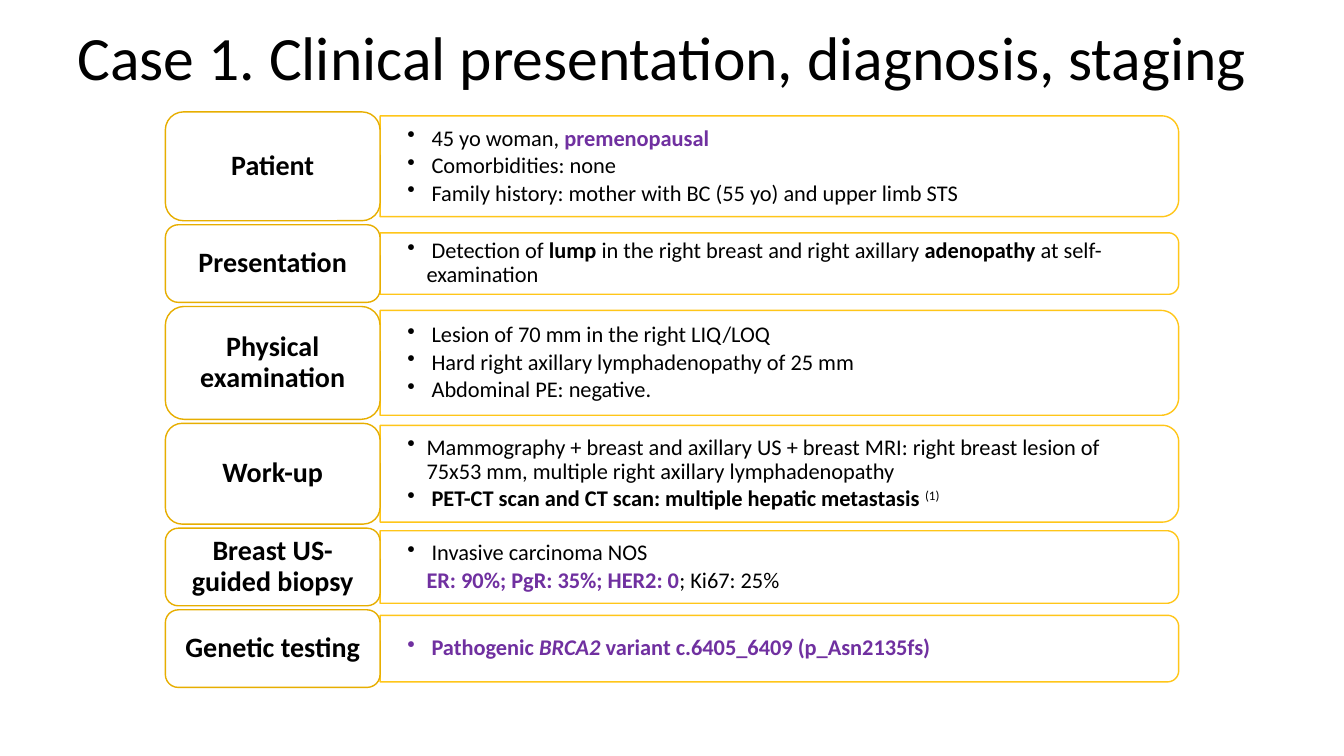
from math import cos, pi, sin

from lxml.etree import SubElement
from pptx import Presentation
from pptx.dml.color import RGBColor
from pptx.enum.shapes import MSO_SHAPE
from pptx.enum.text import MSO_ANCHOR, PP_ALIGN
from pptx.oxml.ns import qn
from pptx.util import Inches, Pt

BLACK = RGBColor(0x00, 0x00, 0x00)
WHITE = RGBColor(0xFF, 0xFF, 0xFF)
PURPLE = RGBColor(0x70, 0x30, 0xA0)
GOLD = RGBColor(0xFF, 0xC0, 0x00)
DARK_GOLD = RGBColor(0xE7, 0xAE, 0x00)

FONT = "Calibri"
LABEL_LEFT, LABEL_WIDTH = 1.64, 2.13
FACTS_LEFT, FACTS_RIGHT = 3.77, 11.69
FIRST_TOP, ROW_GAP = 1.11, 0.04
ARC_STEPS = 12

PLAIN, BOLD, KEY, KEY_ITALIC, NOTE = "plain", "bold", "key", "key italic", "note"

CASE_ROWS = [
    ("Patient", 1.08, 1.0, [
        [(" 45 yo woman, ", PLAIN), ("premenopausal", KEY)],
        [(" Comorbidities: none", PLAIN)],
        [(" Family history: mother with BC (55 yo) and upper limb STS", PLAIN)],
    ]),
    ("Presentation", 0.77, 0.61, [
        [(" Detection of ", PLAIN), ("lump", BOLD),
         (" in the right breast and right axillary ", PLAIN),
         ("adenopathy", BOLD), (" at self-examination", PLAIN)],
    ]),
    ("Physical examination", 1.12, 1.04, [
        [(" Lesion of 70 mm in the right LIQ/LOQ", PLAIN)],
        [(" Hard right axillary lymphadenopathy of 25 mm", PLAIN)],
        [(" Abdominal PE: negative.", PLAIN)],
    ]),
    ("Work-up", 1.0, 0.96, [
        [("Mammography + breast and axillary US + breast MRI: right breast lesion of "
          "75x53 mm, multiple right axillary lymphadenopathy", PLAIN)],
        [(" PET-CT scan and CT scan: multiple hepatic metastasis ", BOLD), ("(1)", NOTE)],
    ]),
    ("Breast US-guided biopsy", 0.77, 0.72, [
        [(" Invasive carcinoma NOS", PLAIN)],
        [("ER: 90%; PgR: 35%; HER2: 0", KEY), ("; Ki67: 25%", PLAIN)],
    ]),
    ("Genetic testing", 0.77, 0.66, [
        [(" Pathogenic ", KEY), ("BRCA2", KEY_ITALIC),
         (" variant c.6405_6409 (p_Asn2135fs)", KEY)],
    ]),
]
UNBULLETED = "ER: 90%; PgR: 35%; HER2: 0"


def set_frame(frame, side, right, vertical):
    """Wrap and centre the text vertically inside the given margins."""
    frame.word_wrap = True
    frame.vertical_anchor = MSO_ANCHOR.MIDDLE
    frame.margin_left, frame.margin_right = Inches(side), Inches(right)
    frame.margin_top = frame.margin_bottom = Inches(vertical)


def set_paragraph(paragraph, size):
    """Give a paragraph the common font and line spacing."""
    paragraph.line_spacing = 0.9
    paragraph.font.name = FONT
    paragraph.font.size = Pt(size)


def outline(shape, color):
    """Fill a shape white with a thin coloured edge."""
    shape.shadow.inherit = False
    shape.fill.solid()
    shape.fill.fore_color.rgb = WHITE
    shape.line.color.rgb = color
    shape.line.width = Pt(1)


def add_title(slide, text):
    """Write the slide title."""
    title = slide.shapes.add_textbox(Inches(0.67), Inches(0.1), Inches(12), Inches(1))
    set_frame(title.text_frame, 0.1, 0.1, 0.05)
    heading = title.text_frame.paragraphs[0]
    heading.text = text
    set_paragraph(heading, 44)
    heading.font.color.rgb = BLACK


def add_label(slide, text, top, height):
    """Draw the rounded box that names a row."""
    label = slide.shapes.add_shape(
        MSO_SHAPE.ROUNDED_RECTANGLE,
        Inches(LABEL_LEFT), Inches(top), Inches(LABEL_WIDTH), Inches(height))
    outline(label, DARK_GOLD)
    set_frame(label.text_frame, 0.08, 0.08, 0.04)
    name = label.text_frame.paragraphs[0]
    name.text = text
    name.alignment = PP_ALIGN.CENTER
    set_paragraph(name, 20)
    name.font.bold = True
    name.font.color.rgb = BLACK


def corner(x, y, radius, start):
    """Return the points of a quarter circle around x, y."""
    angles = [start + pi / 2 * step / ARC_STEPS for step in range(ARC_STEPS + 1)]
    return [(Inches(x + radius * cos(a)), Inches(y + radius * sin(a))) for a in angles]


def add_run(paragraph, text, style):
    """Append a run in one of the named styles."""
    run = paragraph.add_run()
    run.text = text
    run.font.bold = style in (BOLD, KEY, KEY_ITALIC)
    run.font.color.rgb = PURPLE if style in (KEY, KEY_ITALIC) else BLACK
    if style == KEY_ITALIC:
        run.font.italic = True
    if style == NOTE:
        run._r.get_or_add_rPr().set("baseline", "30000")


def add_fact(paragraph, runs):
    """Write one finding with its hanging bullet."""
    bulleted = runs[0][0] != UNBULLETED
    properties = paragraph._p.get_or_add_pPr()
    properties.set("marL", str(Inches(0.19)))
    properties.set("indent", str(Inches(-0.19) if bulleted else 0))
    paragraph.space_after = Pt(2.4)
    if bulleted:
        SubElement(properties, qn("a:buChar")).set("char", "•")
    set_paragraph(paragraph, 16)
    for text, style in runs:
        add_run(paragraph, text, style)


def add_facts(slide, facts, top, height):
    """Draw the panel rounded on its right side and list the findings."""
    bottom, radius = top + height, height / 6
    center_x = FACTS_RIGHT - radius
    points = (corner(center_x, top + radius, radius, -pi / 2)
              + corner(center_x, bottom - radius, radius, 0)
              + [(Inches(FACTS_LEFT), Inches(bottom))])
    builder = slide.shapes.build_freeform(Inches(FACTS_LEFT), Inches(top))
    builder.add_line_segments(points, close=True)
    panel = builder.convert_to_shape()
    outline(panel, GOLD)
    for color in panel._element.spPr.iter(qn("a:srgbClr")):
        SubElement(color, qn("a:alpha")).set("val", "90000")
    frame = panel.text_frame
    set_frame(frame, 0.27, 0.32, 0)
    for index, runs in enumerate(facts):
        paragraph = frame.add_paragraph() if index else frame.paragraphs[0]
        paragraph.alignment = PP_ALIGN.LEFT
        add_fact(paragraph, runs)


def main():
    """Build the case slide."""
    deck = Presentation()
    deck.slide_width, deck.slide_height = Inches(13.33), Inches(7.5)
    slide = deck.slides.add_slide(deck.slide_layouts[6])
    add_title(slide, "Case 1. Clinical presentation, diagnosis, staging")
    top = FIRST_TOP
    for name, label_height, facts_height, facts in CASE_ROWS:
        add_facts(slide, facts, top + (label_height - facts_height) / 2, facts_height)
        add_label(slide, name, top, label_height)
        top += label_height + ROW_GAP
    deck.save("out.pptx")


if __name__ == "__main__":
    main()
